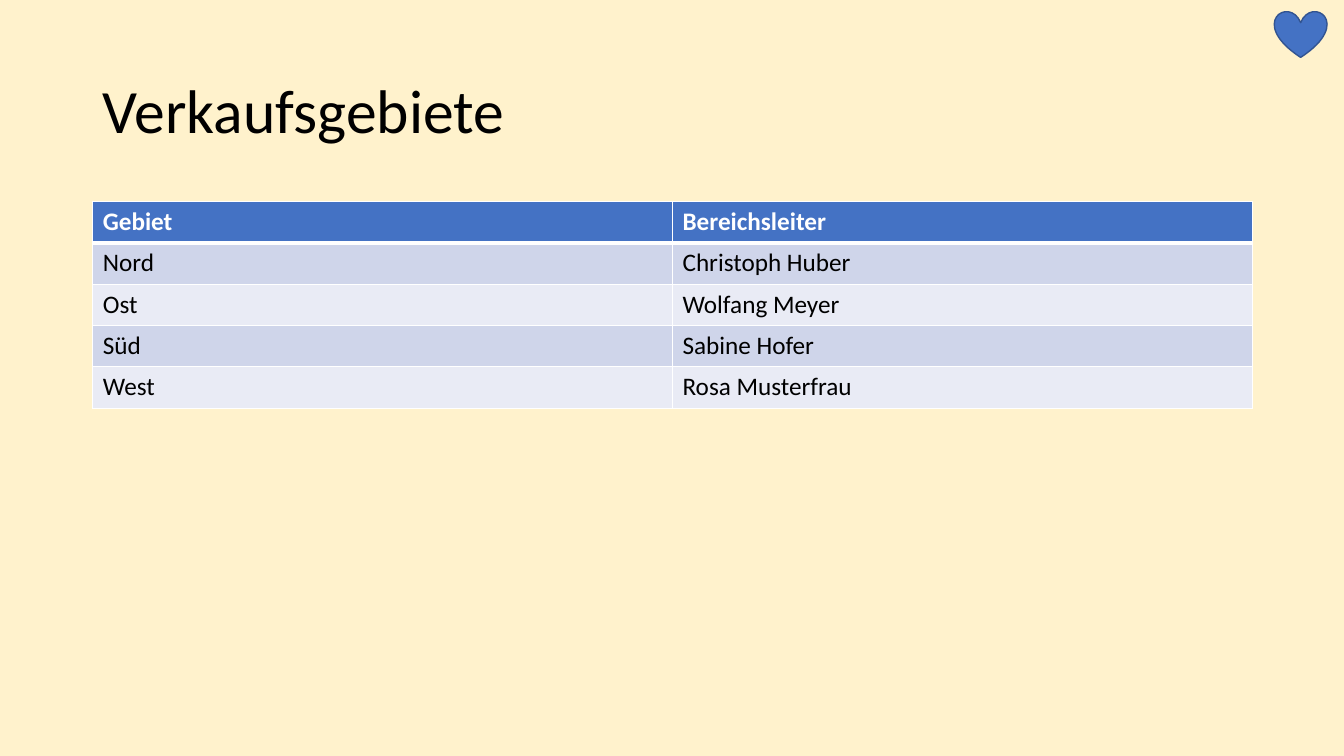
from lxml.etree import SubElement
from pptx import Presentation
from pptx.dml.color import RGBColor
from pptx.enum.shapes import MSO_SHAPE
from pptx.enum.text import MSO_ANCHOR, PP_ALIGN
from pptx.oxml.ns import qn
from pptx.util import Inches, Pt

# Content
TITLE = "Verkaufsgebiete"
REGIONS = [
    ("Gebiet", "Bereichsleiter"),
    ("Nord", "Christoph Huber"),
    ("Ost", "Wolfang Meyer"),
    ("Süd", "Sabine Hofer"),
    ("West", "Rosa Musterfrau"),
]

# Format
FONT = "Calibri"
CREAM = RGBColor(0xFF, 0xF2, 0xCC)
BLUE = RGBColor(0x44, 0x72, 0xC4)
DARK_BLUE = RGBColor(0x32, 0x54, 0x91)
BANDS = [RGBColor(0xE9, 0xEB, 0xF5), RGBColor(0xCF, 0xD5, 0xEA)]
BLACK = RGBColor(0, 0, 0)
WHITE = RGBColor(0xFF, 0xFF, 0xFF)

# Layout in inches
WIDTH, HEIGHT = 13.33, 7.5
MARGIN = 0.92
CONTENT_WIDTH = 11.5
ROW_HEIGHT = 0.41


def write(frame, text, size=18, color=BLACK, bold=False, spacing=1.0):
    paragraph = frame.paragraphs[0]
    paragraph.alignment = PP_ALIGN.LEFT
    paragraph.line_spacing = spacing
    run = paragraph.add_run()
    run.text = text
    run.font.name = FONT
    run.font.size = Pt(size)
    run.font.bold = bold
    run.font.color.rgb = color


def add_borders(cell, top=1, bottom=1):
    properties = cell._tc.get_or_add_tcPr()
    for side, points in (("L", 1), ("R", 1), ("T", top), ("B", bottom)):
        border = SubElement(properties, qn(f"a:ln{side}"), w=str(Pt(points)))
        fill = SubElement(border, qn("a:solidFill"))
        SubElement(fill, qn("a:srgbClr"), val=str(WHITE))


def main():
    presentation = Presentation()
    presentation.slide_width = Inches(WIDTH)
    presentation.slide_height = Inches(HEIGHT)
    slide = presentation.slides.add_slide(presentation.slide_layouts[5])
    slide.background.fill.solid()
    slide.background.fill.fore_color.rgb = CREAM

    # Heart in the corner
    heart = slide.shapes.add_shape(
        MSO_SHAPE.HEART, Inches(12.64), Inches(0.11), Inches(0.52), Inches(0.46))
    heart.shadow.inherit = False
    heart.fill.solid()
    heart.fill.fore_color.rgb = BLUE
    heart.line.color.rgb = DARK_BLUE
    heart.line.width = Pt(1)

    # Title
    title = slide.shapes.title
    title.left, title.top = Inches(MARGIN), Inches(0.4)
    title.width, title.height = Inches(CONTENT_WIDTH), Inches(1.45)
    title.text_frame.vertical_anchor = MSO_ANCHOR.MIDDLE
    write(title.text_frame, TITLE, size=44, spacing=0.9)

    # Table of regions
    regions = slide.shapes.add_table(
        len(REGIONS), len(REGIONS[0]), Inches(MARGIN), Inches(2),
        Inches(CONTENT_WIDTH), Inches(ROW_HEIGHT * len(REGIONS))).table
    for r, entries in enumerate(REGIONS):
        header = r == 0
        for c, entry in enumerate(entries):
            cell = regions.cell(r, c)
            add_borders(cell, top=3 if r == 1 else 1, bottom=3 if header else 1)
            cell.fill.solid()
            cell.fill.fore_color.rgb = BLUE if header else BANDS[r % 2]
            write(cell.text_frame, entry, color=WHITE if header else BLACK, bold=header)

    presentation.save("out.pptx")


if __name__ == "__main__":
    main()
